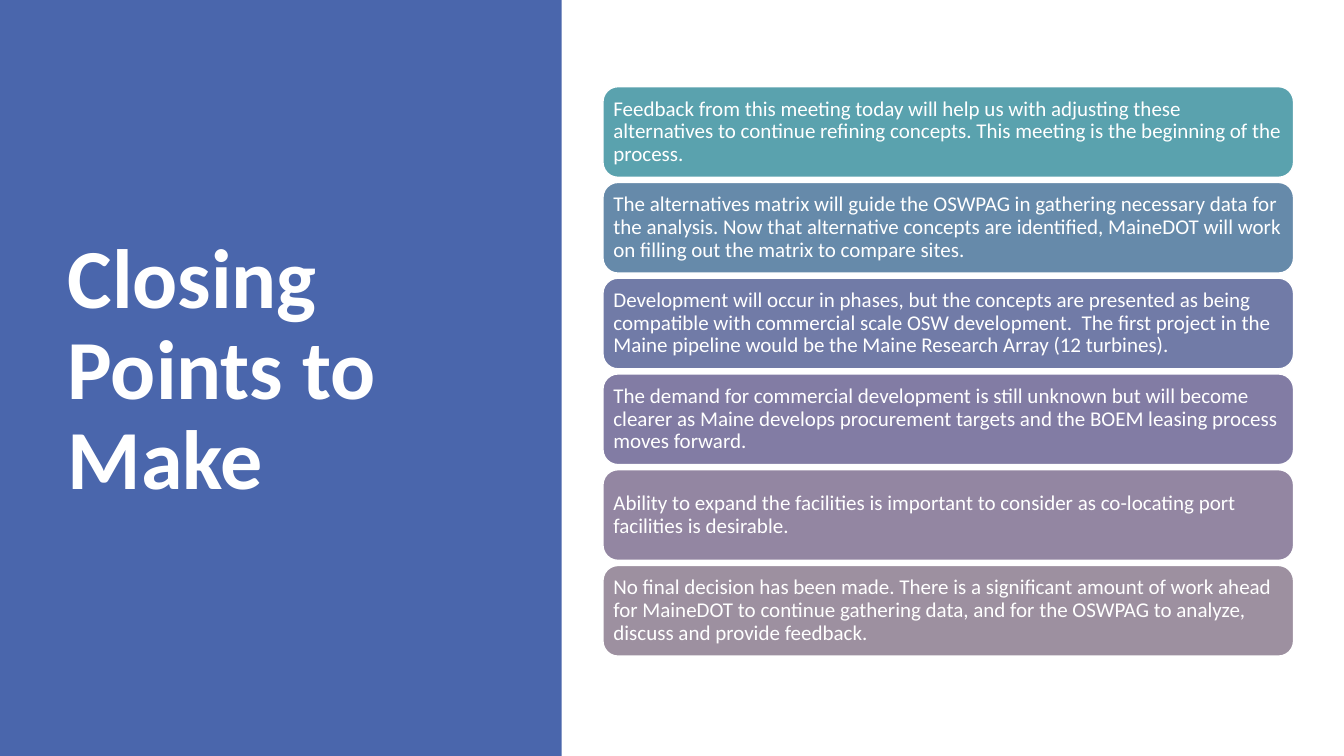
import pptx
import pptx.util
import pptx.dml.color
import pptx.enum.shapes
import pptx.enum.text

Inches = pptx.util.Inches
Color = pptx.dml.color.RGBColor
Shape = pptx.enum.shapes.MSO_SHAPE

WHITE = Color(0xFF, 0xFF, 0xFF)
BLUE = Color(0x4A, 0x66, 0xAC)
TEAL = Color(0x5A, 0xA2, 0xAE)
STEEL = Color(0x66, 0x8A, 0xAA)
SLATE = Color(0x71, 0x7B, 0xA7)
VIOLET = Color(0x82, 0x7C, 0xA4)
MAUVE = Color(0x93, 0x86, 0xA2)
ROSE = Color(0x9D, 0x90, 0xA0)

HEAD = "Closing Points to Make"
POINTS = [
    (TEAL, "Feedback from this meeting today will help us with adjusting these alternatives to continue refining concepts. This meeting is the beginning of the process."),
    (STEEL, "The alternatives matrix will guide the OSWPAG in gathering necessary data for the analysis. Now that alternative concepts are identified, MaineDOT will work on filling out the matrix to compare sites."),
    (SLATE, "Development will occur in phases, but the concepts are presented as being compatible with commercial scale OSW development.  The first project in the Maine pipeline would be the Maine Research Array (12 turbines)."),
    (VIOLET, "The demand for commercial development is still unknown but will become clearer as Maine develops procurement targets and the BOEM leasing process moves forward."),
    (MAUVE, "Ability to expand the facilities is important to consider as co-locating port facilities is desirable."),
    (ROSE, "No final decision has been made. There is a significant amount of work ahead for MaineDOT to continue gathering data, and for the OSWPAG to analyze, discuss and provide feedback."),
]

WIDE, HIGH = 13.33, 7.5
PANEL = 5.57
LEFT, TOP, SPAN = 5.98, 0.86, 6.85
TALL, STEP = 0.9, 0.95
INSET = 0.06


def add_box(slide, kind, place, fill):
    box = slide.shapes.add_shape(kind, *map(Inches, place))
    box.shadow.inherit = False
    box.fill.solid()
    box.fill.fore_color.rgb = fill
    box.line.fill.background()
    return box


def set_text(shape, text, size, bold):
    frame = shape.text_frame
    frame.text = text
    frame.word_wrap = True
    frame.auto_size = pptx.enum.text.MSO_AUTO_SIZE.NONE
    frame.vertical_anchor = pptx.enum.text.MSO_ANCHOR.MIDDLE
    line = frame.paragraphs[0]
    line.alignment = pptx.enum.text.PP_ALIGN.LEFT
    line.line_spacing = 0.9
    font = line.runs[0].font
    font.name = "Calibri"
    font.size = pptx.util.Pt(size)
    font.bold = bold
    font.color.rgb = WHITE
    return frame


def main():
    deck = pptx.Presentation()
    deck.slide_width, deck.slide_height = Inches(WIDE), Inches(HIGH)
    slide = deck.slides.add_slide(deck.slide_layouts.get_by_name("Title Only"))

    panel = add_box(slide, Shape.RECTANGLE, (0, 0, PANEL, HIGH), BLUE)
    title = slide.shapes.title
    title._element.addprevious(panel._element)
    title.left, title.top = Inches(0.57), Inches(0.68)
    title.width, title.height = Inches(4.16), Inches(6.02)
    set_text(title, HEAD, 60, True)

    for row, (fill, text) in enumerate(POINTS):
        place = (LEFT, TOP + row * STEP, SPAN, TALL)
        card = add_box(slide, Shape.ROUNDED_RECTANGLE, place, fill)
        card.line.color.rgb = WHITE
        card.line.width = pptx.util.Pt(1)
        frame = set_text(card, text, 15, False)
        frame.margin_left = frame.margin_right = Inches(INSET)
        frame.margin_top = frame.margin_bottom = Inches(INSET)

    deck.save("out.pptx")


if __name__ == "__main__":
    main()
